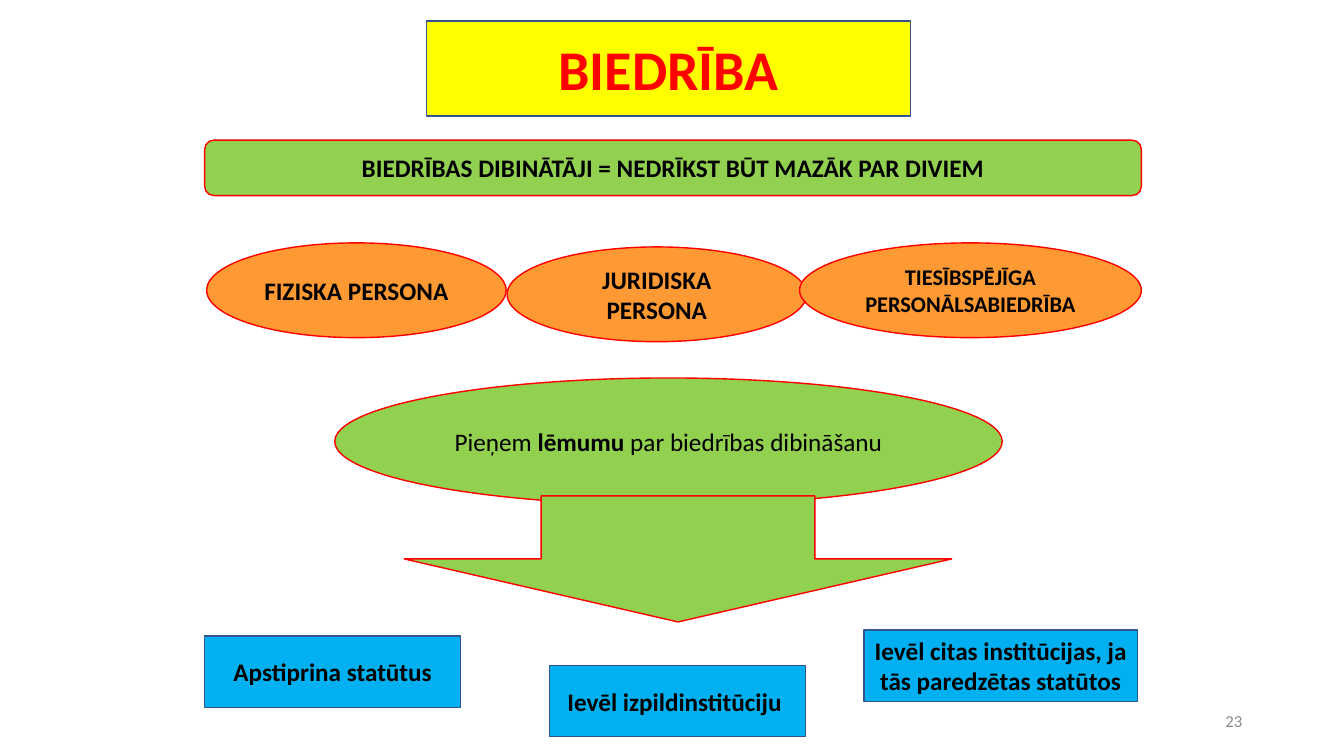
from lxml import etree
from pptx import Presentation
from pptx.dml.color import RGBColor
from pptx.enum.shapes import MSO_SHAPE as SHAPE
from pptx.enum.text import MSO_ANCHOR, MSO_AUTO_SIZE, PP_ALIGN
from pptx.oxml.ns import qn
from pptx.util import Inches, Pt

YELLOW = RGBColor(0xFF, 0xFF, 0x00)
GREEN = RGBColor(0x92, 0xD0, 0x50)
ORANGE = RGBColor(0xFF, 0x99, 0x33)
BLUE = RGBColor(0x00, 0xB0, 0xF0)
NAVY = RGBColor(0x32, 0x54, 0x91)
RED = RGBColor(0xFF, 0x00, 0x00)
BLACK = RGBColor(0x00, 0x00, 0x00)
GRAY = RGBColor(0x8C, 0x8C, 0x8C)
FONT = "Calibri"

# Content: runs are (text, bold); boxes are left, top, width, height in inches
TITLE = ([("BIEDRĪBA", True)], (4.23, 0.21, 4.8, 0.94))
FOUNDERS_RULE = ([("BIEDRĪBAS DIBINĀTĀJI = NEDRĪKST BŪT MAZĀK PAR DIVIEM", True)],
                 (2.03, 1.39, 9.29, 0.55))
FOUNDERS = [
    ("FIZISKA PERSONA", 18, (2.05, 2.41, 2.97)),
    ("JURIDISKA PERSONA", 18, (5.03, 2.45, 2.97)),
    ("TIESĪBSPĒJĪGA PERSONĀLSABIEDRĪBA", 16, (7.93, 2.41, 3.39)),
]
FOUNDER_HEIGHT = 0.94
DECISION = ([("Pieņem ", False), ("lēmumu", True), (" par biedrības dibināšanu", False)],
            (3.32, 3.75, 6.62, 1.26))
ARROW_BOX = (4.01, 4.92, 5.43, 1.25)
STEPS = [
    ("Apstiprina statūtus", (2.03, 6.31, 2.54)),
    ("Ievēl izpildinstitūciju ", (5.45, 6.6, 2.54)),
    ("Ievēl citas institūcijas, ja tās paredzētas statūtos", (8.57, 6.25, 2.71)),
]
STEP_HEIGHT = 0.71
PAGE_NUMBER = ([("23", False)], (9.42, 6.95, 3, 0.4))


def write(shape, runs, size=18, color=BLACK, align=PP_ALIGN.CENTER):
    frame = shape.text_frame
    frame.word_wrap = True
    frame.auto_size = MSO_AUTO_SIZE.NONE
    frame.vertical_anchor = MSO_ANCHOR.MIDDLE
    paragraph = frame.paragraphs[0]
    paragraph.alignment = align
    for text, bold in runs:
        run = paragraph.add_run()
        run.text = text
        for name, value in {"name": FONT, "size": Pt(size), "bold": bold}.items():
            setattr(run.font, name, value)
        run.font.color.rgb = color


def paint(shape, fill, line):
    shape.fill.solid()
    shape.fill.fore_color.rgb = fill
    shape.line.color.rgb = line
    shape.line.width = Pt(1)


def add_figure(kind, box, fill, line, runs=(), size=18):
    shape = slide.shapes.add_shape(kind, *map(Inches, box))
    shape.shadow.inherit = False
    paint(shape, fill, line)
    write(shape, runs, size)


presentation = Presentation()
presentation.slide_width = Inches(13.33)
presentation.slide_height = Inches(7.5)
slide = presentation.slides.add_slide(presentation.slide_layouts[5])

# Title placeholder, shaped as an ellipse
title_runs, title_box = TITLE
title = slide.shapes.title
for side, length in zip(("left", "top", "width", "height"), title_box):
    setattr(title, side, Inches(length))
ellipse = etree.SubElement(title.element.spPr, qn("a:prstGeom"), prst="ellipse")
etree.SubElement(ellipse, qn("a:avLst"))
paint(title, YELLOW, NAVY)
write(title, title_runs, 40, RED)

# Founders
rule_runs, rule_box = FOUNDERS_RULE
add_figure(SHAPE.ROUNDED_RECTANGLE, rule_box, GREEN, RED, rule_runs)
for text, size, place in FOUNDERS:
    add_figure(SHAPE.OVAL, (*place, FOUNDER_HEIGHT), ORANGE, RED, [(text, True)], size)

# Decision and the steps that follow
decision_runs, decision_box = DECISION
add_figure(SHAPE.OVAL, decision_box, GREEN, RED, decision_runs)
add_figure(SHAPE.DOWN_ARROW, ARROW_BOX, GREEN, RED)
for text, place in STEPS:
    add_figure(SHAPE.RECTANGLE, (*place, STEP_HEIGHT), BLUE, NAVY, [(text, True)])

# Page number
number_runs, number_box = PAGE_NUMBER
number = slide.shapes.add_textbox(*map(Inches, number_box))
write(number, number_runs, 12, GRAY, PP_ALIGN.RIGHT)

presentation.save("out.pptx")
